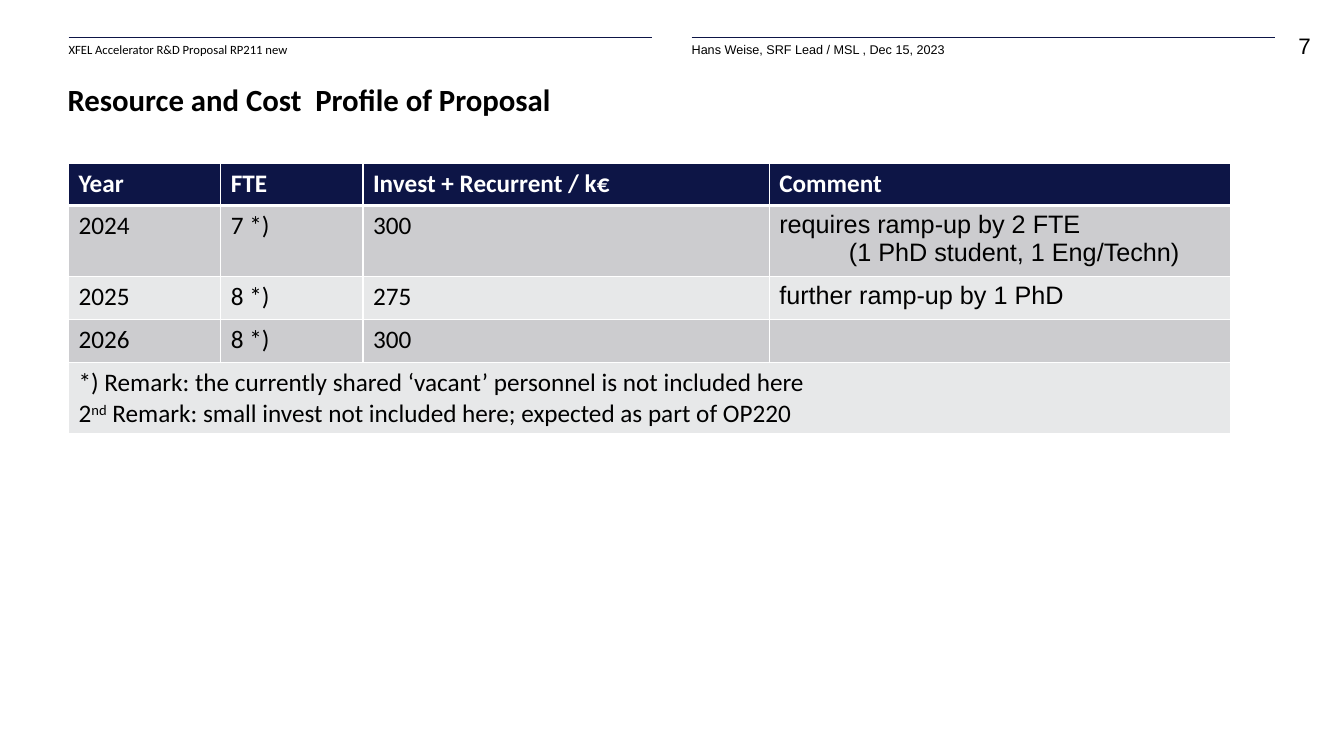
"""Builds the resource and cost profile slide."""
import pptx
import pptx.dml.color
import pptx.enum.shapes
import pptx.enum.text
import pptx.oxml
import pptx.oxml.ns
import pptx.util

Inches = pptx.util.Inches
ALIGN = pptx.enum.text.PP_ALIGN
ANCHOR = pptx.enum.text.MSO_ANCHOR

COLORS = {"navy": "0D1546", "black": "000000", "white": "FFFFFF",
          "dark band": "CCCCCF", "light band": "E7E8E9"}
TITLE = "Resource and Cost  Profile of Proposal"
HEADERS = [
    (0.68, "XFEL Accelerator R&D Proposal RP211 new", "Calibri"),
    (6.86, "Hans Weise, SRF Lead / MSL , Dec 15, 2023", "Arial"),
]
HEADER_WIDTH = 5.79
PAGE_NUMBER = "7"
ROWS = [
    ["Year", "FTE", "Invest + Recurrent / k€", "Comment"],
    ["2024", "7 *)", "300", ["requires ramp-up by 2 FTE", "(1 PhD student, 1 Eng/Techn)"]],
    ["2025", "8 *)", "275", "further ramp-up by 1 PhD"],
    ["2026", "8 *)", "300", ""],
]
REMARKS = [
    "*) Remark: the currently shared ‘vacant’ personnel is not included here",
    [("2", False), ("nd", True),
     (" Remark: small invest not included here; expected as part of OP220", False)],
]
COLUMN_WIDTHS = [1.51, 1.41, 4.03, 4.58]
ROW_HEIGHTS = [0.42, 0.66, 0.43, 0.43, 0.7]


def color(name):
    return pptx.dml.color.RGBColor.from_string(COLORS[name])


def write(frame, text, size=18, font="Calibri", ink="black", bold=False,
          align=ALIGN.LEFT, indent=0):
    lines = text if isinstance(text, list) else [text]
    for index, line in enumerate(lines):
        para = frame.add_paragraph() if index else frame.paragraphs[0]
        para.alignment = align
        if index and indent:
            para._p.get_or_add_pPr().set("marL", str(Inches(indent)))
        for words, raised in line if isinstance(line, list) else [(line, False)]:
            span = para.add_run()
            span.text = words
            span.font.size = pptx.util.Pt(size)
            span.font.name = font
            span.font.bold = bold
            span.font.color.rgb = color(ink)
            if raised:
                span._r.get_or_add_rPr().set("baseline", "30000")


def add_text(page, text, left, top, width, height, anchor=ANCHOR.TOP, **style):
    box = page.shapes.add_textbox(*map(Inches, (left, top, width, height)))
    frame = box.text_frame
    frame.word_wrap = True
    frame.vertical_anchor = anchor
    frame.margin_left = frame.margin_right = frame.margin_top = frame.margin_bottom = 0
    write(frame, text, **style)


def add_rule(page, left, top, width):
    rule = page.shapes.add_connector(
        pptx.enum.shapes.MSO_CONNECTOR.STRAIGHT,
        *map(Inches, (left, top, left + width, top)))
    rule.line.color.rgb = color("navy")
    rule.line.width = pptx.util.Pt(0.5)
    rule._element.spPr.append(pptx.oxml.parse_xml(
        f"<a:effectLst {pptx.oxml.ns.nsdecls('a')}/>"))


def format_cell(cell, row):
    properties = cell._tc.get_or_add_tcPr()
    for side in "LRTB":
        heavy = (row, side) in [(0, "B"), (1, "T")]
        width = pptx.util.Pt(3 if heavy else 1)
        properties.append(pptx.oxml.parse_xml(
            f'<a:ln{side} {pptx.oxml.ns.nsdecls("a")} w="{width}"><a:solidFill>'
            f'<a:srgbClr val="{COLORS["white"]}"/></a:solidFill></a:ln{side}>'))
    band = "dark band" if row % 2 else "light band"
    cell.fill.solid()
    cell.fill.fore_color.rgb = color(band if row else "navy")


def add_cost_table(page):
    table = page.shapes.add_table(
        len(ROW_HEIGHTS), len(COLUMN_WIDTHS), Inches(0.68), Inches(1.62),
        Inches(sum(COLUMN_WIDTHS)), Inches(sum(ROW_HEIGHTS))).table
    for column, width in zip(table.columns, COLUMN_WIDTHS):
        column.width = Inches(width)
    for row, height in enumerate(ROW_HEIGHTS):
        table.rows[row].height = Inches(height)
        for cell in table.rows[row].cells:
            format_cell(cell, row)
    for row, values in enumerate(ROWS):
        for column, text in enumerate(values):
            comment = row > 0 and column == len(values) - 1
            if text:
                write(table.cell(row, column).text_frame, text,
                      font="Arial" if comment else "Calibri",
                      ink="black" if row else "white", bold=row == 0, indent=0.69)
    last = len(ROWS)
    table.cell(last, 0).merge(table.cell(last, len(COLUMN_WIDTHS) - 1))
    write(table.cell(last, 0).text_frame, REMARKS)


def main():
    deck = pptx.Presentation()
    deck.slide_width, deck.slide_height = Inches(13.33), Inches(7.5)
    page = deck.slides.add_slide(deck.slide_layouts[6])
    add_text(page, PAGE_NUMBER, 12.44, 0.32, 0.56, 0.32,
             size=16, font="Arial", align=ALIGN.RIGHT)
    for left, text, font in HEADERS:
        add_rule(page, left, 0.37, HEADER_WIDTH)
        add_text(page, text, left, 0.42, HEADER_WIDTH, 0.24, size=9, font=font)
    add_text(page, TITLE, 0.67, 0.78, 11.98, 0.39,
             anchor=ANCHOR.BOTTOM, size=22, bold=True)
    add_cost_table(page)
    deck.save("out.pptx")


if __name__ == "__main__":
    main()
